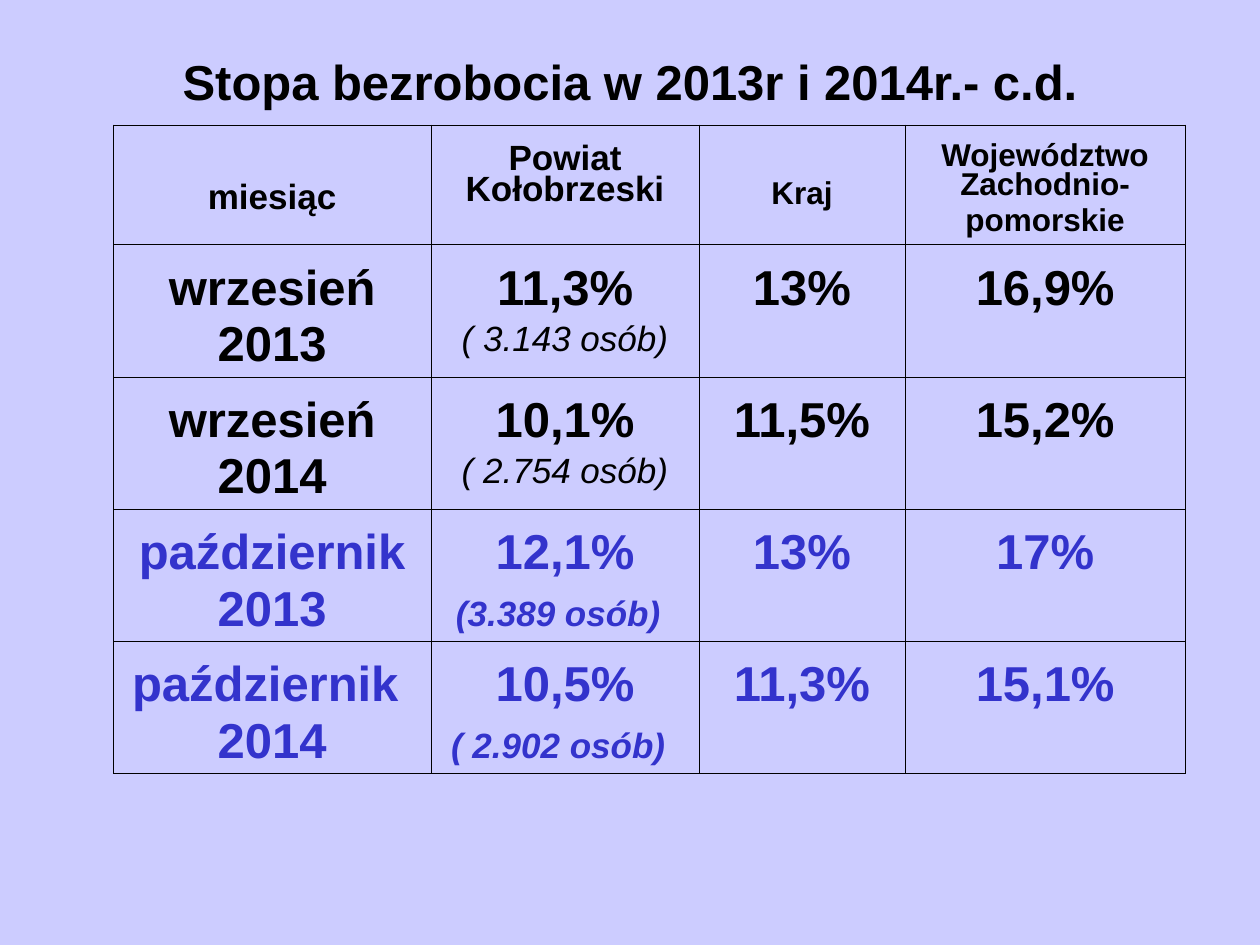
from lxml.etree import SubElement
from pptx import Presentation
from pptx.dml.color import RGBColor
from pptx.enum.text import MSO_ANCHOR, PP_ALIGN
from pptx.oxml.ns import qn
from pptx.util import Inches, Pt

COLORS = {"background": "CCCCFF", "text": "000000", "october": "3333CC", "border": "000000"}
FONT = "Arial"

TITLE = "Stopa bezrobocia w 2013r i 2014r.- c.d."
# Header cells: lines, size, top margin, space before
HEADERS = [
    (["miesiąc"], 20, 0.47, 4.5),
    (["Powiat Kołobrzeski"], 20, 0.16, 5),
    (["Kraj"], 18, 0.45, 4.5),
    (["Województwo Zachodnio-", "pomorskie"], 18, 0.15, 4.5),
]
# Month, year, county rate, number of people, country rate, province rate
RATES = [
    ("wrzesień", "2013", "11,3%", "( 3.143 osób)", "13%", "16,9%"),
    ("wrzesień", "2014", "10,1%", "( 2.754 osób)", "11,5%", "15,2%"),
    ("październik", "2013", "12,1%", "(3.389 osób)", "13%", "17%"),
    ("październik ", "2014", "10,5%", "( 2.902 osób)", "11,3%", "15,1%"),
]
COLUMN_WIDTHS = [2.52, 2.13, 1.63, 2.23]
ROW_HEIGHTS = [0.95] + [1.05] * len(RATES)
TABLE_LEFT, TABLE_TOP = 0.9, 0.99
OUTER_LINE, INNER_LINE = 0.23, 0.11


def rgb(name):
    return RGBColor.from_string(COLORS[name])


def style_font(font, size, color="text", bold=True, italic=False):
    font.name, font.size, font.bold, font.italic = FONT, Pt(size), bold, italic
    font.color.rgb = rgb(color)


def add_line(cell, text, size, before, first, **style):
    frame = cell.text_frame
    line = frame.paragraphs[0] if first else frame.add_paragraph()
    line.alignment = PP_ALIGN.CENTER
    line.line_spacing = 0.81
    line.space_before = Pt(before)
    style_font(line.font, size, **style)
    line.add_run().text = text
    return line


def draw_borders(cell, row, column):
    outer = {
        "a:lnL": column == 0,
        "a:lnR": column == len(COLUMN_WIDTHS) - 1,
        "a:lnT": row == 0,
        "a:lnB": row == len(ROW_HEIGHTS) - 1,
    }
    properties = cell._tc.get_or_add_tcPr()
    for side, is_outer in outer.items():
        width = Pt(OUTER_LINE if is_outer else INNER_LINE)
        border = SubElement(properties, qn(side), w=str(int(width)))
        fill = SubElement(border, qn("a:solidFill"))
        SubElement(fill, qn("a:srgbClr"), val=COLORS["border"])


def main():
    deck = Presentation()
    deck.slide_width, deck.slide_height = Inches(10), Inches(7.5)
    slide = deck.slides.add_slide(deck.slide_layouts[5])
    slide.background.fill.solid()
    slide.background.fill.fore_color.rgb = rgb("background")

    # Title
    title = slide.shapes.title
    title.left, title.top = Inches(0.5), Inches(0.3)
    title.width, title.height = Inches(9), Inches(0.69)
    title.text_frame.text = TITLE
    title.text_frame.vertical_anchor = MSO_ANCHOR.MIDDLE
    heading = title.text_frame.paragraphs[0]
    heading.alignment = PP_ALIGN.CENTER
    style_font(heading.font, 28)

    # Table grid
    table = slide.shapes.add_table(
        len(ROW_HEIGHTS), len(COLUMN_WIDTHS), Inches(TABLE_LEFT), Inches(TABLE_TOP),
        Inches(sum(COLUMN_WIDTHS)), Inches(sum(ROW_HEIGHTS))).table
    table.first_row = table.horz_banding = False
    for column, width in zip(table.columns, COLUMN_WIDTHS):
        column.width = Inches(width)
    for r, height in enumerate(ROW_HEIGHTS):
        table.rows[r].height = Inches(height)
        for c in range(len(COLUMN_WIDTHS)):
            cell = table.cell(r, c)
            cell.margin_top = Inches(0.2)
            draw_borders(cell, r, c)
            cell.fill.background()

    # Header row
    for c, (lines, size, top, before) in enumerate(HEADERS):
        cell = table.cell(0, c)
        cell.margin_top = Inches(top)
        for i, text in enumerate(lines):
            add_line(cell, text, size, before, i == 0)

    # Rates by month
    for r, (month, year, county, people, country, province) in enumerate(RATES, 1):
        october = month.startswith("październik")
        color = "october" if october else "text"
        for c, lines in enumerate([(month, year), (county,), (country,), (province,)]):
            for i, text in enumerate(lines):
                add_line(table.cell(r, c), text, 28, 7, i == 0, color=color)
        note = add_line(table.cell(r, 1), people, 20, 7, False,
                        color=color, bold=october, italic=True)
        if october:
            space = note.add_run()
            space.text = " "
            style_font(space.font, 28, color)

    deck.save("out.pptx")


if __name__ == "__main__":
    main()
